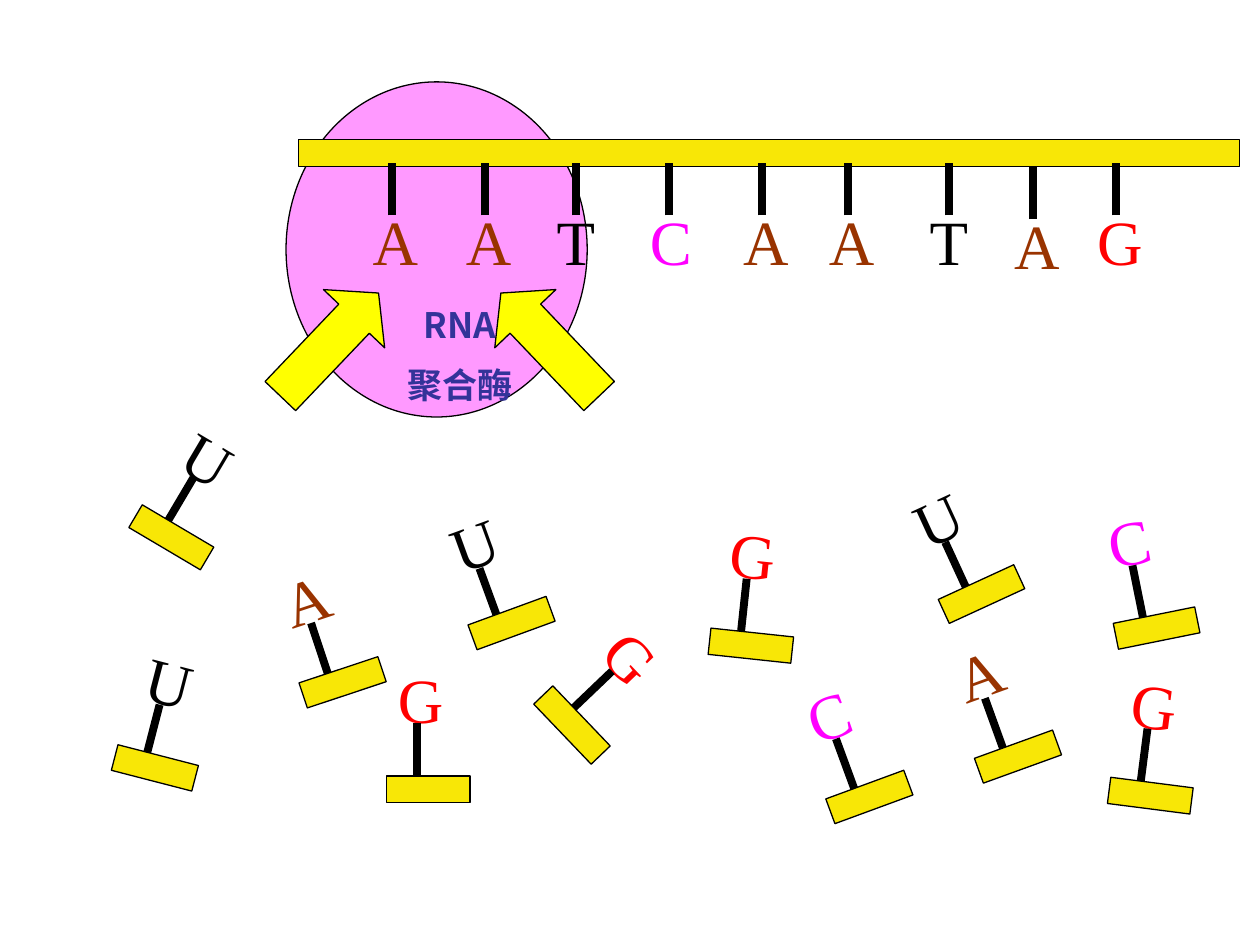
from math import cos, radians, sin

from lxml.etree import SubElement
from pptx import Presentation
from pptx.dml.color import RGBColor
from pptx.enum.shapes import MSO_CONNECTOR, MSO_SHAPE
from pptx.enum.text import MSO_AUTO_SIZE, PP_ALIGN
from pptx.oxml.ns import qn
from pptx.util import Inches, Pt

BLACK = RGBColor(0x00, 0x00, 0x00)
BROWN = RGBColor(0x99, 0x33, 0x00)
RED = RGBColor(0xFF, 0x00, 0x00)
MAGENTA = RGBColor(0xFF, 0x00, 0xFF)
PINK = RGBColor(0xFF, 0x99, 0xFF)
BACKBONE = RGBColor(0xF8, 0xE7, 0x06)
YELLOW = RGBColor(0xFF, 0xFF, 0x00)
INDIGO = RGBColor(0x33, 0x33, 0x99)

BASE_COLORS = {"A": BROWN, "T": BLACK, "U": BLACK, "C": MAGENTA, "G": RED}
LETTER_WIDTH, LETTER_HEIGHT = 0.66, 0.69
SUGAR_WIDTH, SUGAR_HEIGHT = 0.66, 0.21
STICK_LENGTH = 0.42

STRAND_BASES = [
    ("A", 3.11, 1.29), ("A", 3.85, 1.29), ("T", 4.57, 1.29),
    ("C", 5.31, 1.29), ("A", 6.05, 1.29), ("A", 6.73, 1.29),
    ("T", 7.53, 1.29), ("A", 8.2, 1.32), ("G", 8.86, 1.29),
]
FREE_NUCLEOTIDES = [
    ("A", 2.39, 5.31, -18.4), ("G", 3.07, 6.16, 0), ("C", 8.85, 4.88, -11.4),
    ("U", 1.03, 4.16, 30.6), ("G", 4.21, 5.65, 46.3), ("A", 7.75, 5.9, -19.9),
    ("C", 6.57, 6.22, -20.2), ("G", 8.8, 6.21, 7.3), ("G", 5.63, 5.02, 6.1),
    ("U", 7.46, 4.61, -24.7), ("U", 3.73, 4.84, -20.1), ("U", 0.9, 5.99, 14.5),
]


def add_text(slide, text, left, top, width, height, *, size, font, color,
             bold=False, align=PP_ALIGN.LEFT, turn=0):
    """Add a text box with one paragraph per line of text."""
    box = slide.shapes.add_textbox(Inches(left), Inches(top), Inches(width), Inches(height))
    box.rotation = turn
    frame = box.text_frame
    frame.word_wrap = True
    frame.auto_size = MSO_AUTO_SIZE.SHAPE_TO_FIT_TEXT
    frame.text = text
    for paragraph in frame.paragraphs:
        paragraph.alignment = align
        spacing = SubElement(paragraph._p.get_or_add_pPr(), qn("a:spcBef"))
        SubElement(spacing, qn("a:spcPct")).set("val", "50000")
        for run in paragraph.runs:
            run.font.size = Pt(size)
            run.font.name = font
            run.font.bold = bold
            run.font.color.rgb = color
            SubElement(run._r.get_or_add_rPr(), qn("a:ea")).set("typeface", font)


def add_outlined(slide, preset, left, top, width, height, fill, turn=0):
    """Add a filled preset shape with a thin black outline."""
    shape = slide.shapes.add_shape(
        preset, Inches(left), Inches(top), Inches(width), Inches(height))
    shape.rotation = turn
    shape.shadow.inherit = False
    shape.fill.solid()
    shape.fill.fore_color.rgb = fill
    shape.line.color.rgb = BLACK
    shape.line.width = Pt(0.75)
    return shape


def add_stick(slide, start, end):
    """Add the thick bond between a base and its backbone."""
    stick = slide.shapes.add_connector(
        MSO_CONNECTOR.STRAIGHT, *(Inches(value) for value in (*start, *end)))
    stick.line.color.rgb = BLACK
    stick.line.width = Pt(4.5)
    SubElement(stick._element.spPr, qn("a:effectLst"))


def add_base(slide, letter, left, top, turn=0):
    """Add the letter of a base in its own colour."""
    add_text(slide, letter, left, top, LETTER_WIDTH, LETTER_HEIGHT, size=36,
             font="Times New Roman", color=BASE_COLORS[letter], turn=turn)


def add_template_strand(slide, left, top, width, height):
    """Draw the DNA strand with its bases hanging below it."""
    add_outlined(slide, MSO_SHAPE.RECTANGLE, left, top, width, height, BACKBONE)
    for letter, x, stick_top in STRAND_BASES:
        add_base(slide, letter, x - 0.25, stick_top + 0.27)
        add_stick(slide, (x, stick_top + STICK_LENGTH), (x, stick_top))


def add_nucleotide(slide, letter, left, top, turn):
    """Draw a free nucleotide turned about the centre of its sugar box."""
    center_x, center_y = left + SUGAR_WIDTH / 2, top + SUGAR_HEIGHT / 2
    angle = radians(turn)
    drop = 0.03 if letter == "U" else 0

    def turned(x, y):
        """Turn an offset from the sugar centre into a slide position."""
        y += drop
        return (center_x + x * cos(angle) - y * sin(angle),
                center_y + x * sin(angle) + y * cos(angle))

    letter_x, letter_y = turned(-0.01, -0.73)
    add_base(slide, letter, letter_x - LETTER_WIDTH / 2, letter_y - LETTER_HEIGHT / 2, turn)
    stick_end = -SUGAR_HEIGHT / 2
    add_stick(slide, turned(-0.09, stick_end - STICK_LENGTH), turned(-0.09, stick_end))
    add_outlined(slide, MSO_SHAPE.RECTANGLE, left, top, SUGAR_WIDTH, SUGAR_HEIGHT,
                 BACKBONE, turn)


def add_polymerase_label(slide, left, top, width):
    """Name the enzyme and point at its active site from both sides."""
    add_text(slide, "RNA\n聚合酶", left + 0.51, top - 0.04, 2.18, 0.91, size=20,
             font="Noto Sans CJK SC", color=INDIGO, bold=True, align=PP_ALIGN.CENTER)
    arrow_width = 1.13
    for preset, arrow_left, turn in (
            (MSO_SHAPE.RIGHT_ARROW, left, -46.4),
            (MSO_SHAPE.LEFT_ARROW, left + width - arrow_width, 46.4)):
        arrow = add_outlined(slide, preset, arrow_left, top, arrow_width, 0.67, YELLOW, turn)
        arrow.adjustments[0] = 0.5
        arrow.adjustments[1] = 0.42


def main():
    """Build the transcription slide and save it."""
    deck = Presentation()
    deck.slide_width, deck.slide_height = Inches(10), Inches(7.5)
    slide = deck.slides.add_slide(deck.slide_layouts[6])
    add_outlined(slide, MSO_SHAPE.OVAL, 2.27, 0.65, 2.39, 2.66, PINK)
    add_template_strand(slide, 2.37, 1.11, 7.47, 0.21)
    for nucleotide in FREE_NUCLEOTIDES:
        add_nucleotide(slide, *nucleotide)
    add_polymerase_label(slide, 2.05, 2.4, 2.88)
    deck.save("out.pptx")


if __name__ == "__main__":
    main()
